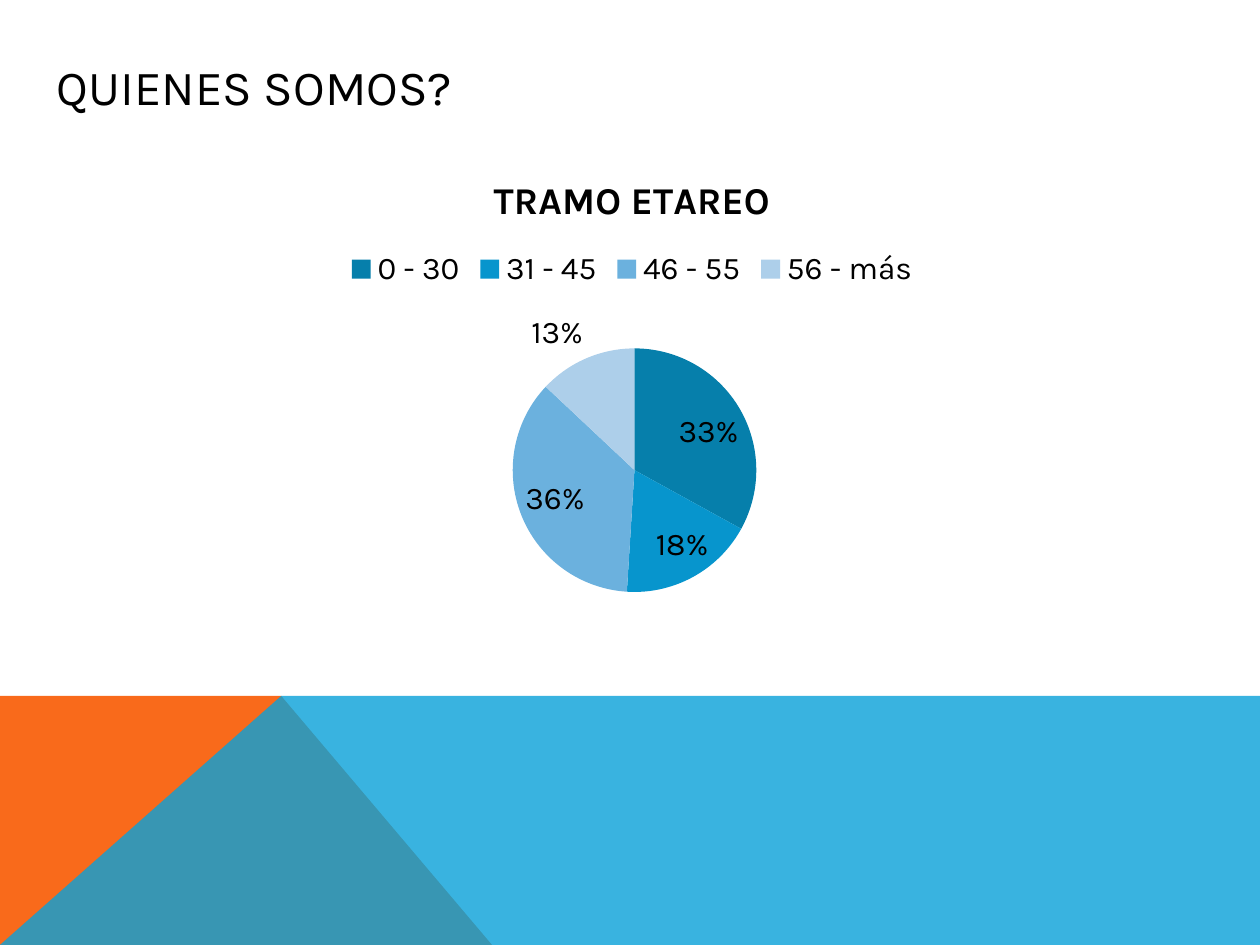
import pptx
import pptx.chart.data
import pptx.dml.color
import pptx.enum.chart
import pptx.enum.text
import pptx.oxml
import pptx.oxml.ns
import pptx.util
from pptx.util import Cm

FONT = "Karla"
COLORS = {
    "text": "000000",
    "orange": "F96A1B",
    "blue": "08A1D9",
    "0 - 30": "067FAB",
    "31 - 45": "0795CD",
    "46 - 55": "6BB1DE",
    "56 - más": "ADCFEA",
}


def write_text(text_frame, text, size, bold=False, color="text", alignment=None):
    paragraph = text_frame.paragraphs[0]
    paragraph.alignment = alignment
    run = paragraph.add_run()
    run.text = text
    run.font.name = FONT
    run.font.size = pptx.util.Pt(size)
    run.font.bold = bold
    run.font.color.rgb = pptx.dml.color.RGBColor.from_string(COLORS[color])


presentation = pptx.Presentation()
presentation.slide_width = Cm(25.4)
presentation.slide_height = Cm(19.05)
slide = presentation.slides.add_slide(presentation.slide_layouts[5])

# Bottom band: orange corner under a translucent blue area
top, bottom, peak = 14.03, 19.05, 5.67
bands = [
    ("orange", 100, [(0, bottom), (0, top), (peak, top), (9.92, bottom)]),
    ("blue", 80, [(0, bottom), (peak, top), (25.4, top), (25.4, bottom)]),
]
for color, opacity, corners in bands:
    points = [(Cm(x), Cm(y)) for x, y in corners]
    builder = slide.shapes.build_freeform(*points[0])
    builder.add_line_segments(points[1:], close=True)
    shape = builder.convert_to_shape()
    shape.shadow.inherit = False
    shape.line.fill.background()
    shape.fill.solid()
    shape.fill.fore_color.rgb = pptx.dml.color.RGBColor.from_string(COLORS[color])
    if opacity < 100:
        fill_color = shape.element.spPr.find(".//" + pptx.oxml.ns.qn("a:srgbClr"))
        alpha = pptx.oxml.parse_xml(
            f'<a:alpha {pptx.oxml.ns.nsdecls("a")} val="{opacity * 1000}"/>')
        fill_color.append(alpha)

# Title
title = slide.shapes.title
title.left, title.top, title.width, title.height = Cm(0.89), Cm(0.33), Cm(24), Cm(2.79)
title.text_frame.vertical_anchor = pptx.enum.text.MSO_ANCHOR.MIDDLE
write_text(title.text_frame, "QUIENES SOMOS?", 28, alignment=pptx.enum.text.PP_ALIGN.LEFT)

# Pie chart of the age groups
shares = {"0 - 30": 33, "31 - 45": 18, "46 - 55": 36, "56 - más": 13}
chart_data = pptx.chart.data.CategoryChartData()
chart_data.categories = list(shares)
chart_data.add_series("Series 1", list(shares.values()))
chart = slide.shapes.add_chart(
    pptx.enum.chart.XL_CHART_TYPE.PIE,
    Cm(2.29), Cm(3.05), Cm(20.9), Cm(9.93), chart_data).chart
chart.font.name = FONT
chart.font.size = pptx.util.Pt(18)
chart.font.color.rgb = pptx.dml.color.RGBColor.from_string(COLORS["text"])
chart.has_title = True
write_text(chart.chart_title.text_frame, "TRAMO ETAREO", 21.6, bold=True)
chart.has_legend = True
chart.legend.position = pptx.enum.chart.XL_LEGEND_POSITION.TOP
chart.legend.include_in_layout = False

# Slice colours and percentages
plot = chart.plots[0]
plot.vary_by_categories = True
for index, category in enumerate(shares):
    fill = plot.series[0].points[index].format.fill
    fill.solid()
    fill.fore_color.rgb = pptx.dml.color.RGBColor.from_string(COLORS[category])
plot.has_data_labels = True
labels = plot.data_labels
labels.show_percentage = True
labels.show_value = False
labels.number_format = "0%"
labels.number_format_is_linked = False
labels.position = pptx.enum.chart.XL_LABEL_POSITION.BEST_FIT

# Place of the pie inside the chart
plot_area = chart.element.find(".//" + pptx.oxml.ns.qn("c:plotArea"))
for layout in plot_area.findall(pptx.oxml.ns.qn("c:layout")):
    plot_area.remove(layout)
plot_area.insert(0, pptx.oxml.parse_xml(
    f'<c:layout {pptx.oxml.ns.nsdecls("c")}><c:manualLayout>'
    '<c:layoutTarget val="inner"/><c:xMode val="edge"/><c:yMode val="edge"/>'
    '<c:x val="0.385"/><c:y val="0.4"/><c:w val="0.235"/><c:h val="0.495"/>'
    '</c:manualLayout></c:layout>'))

presentation.save("out.pptx")
